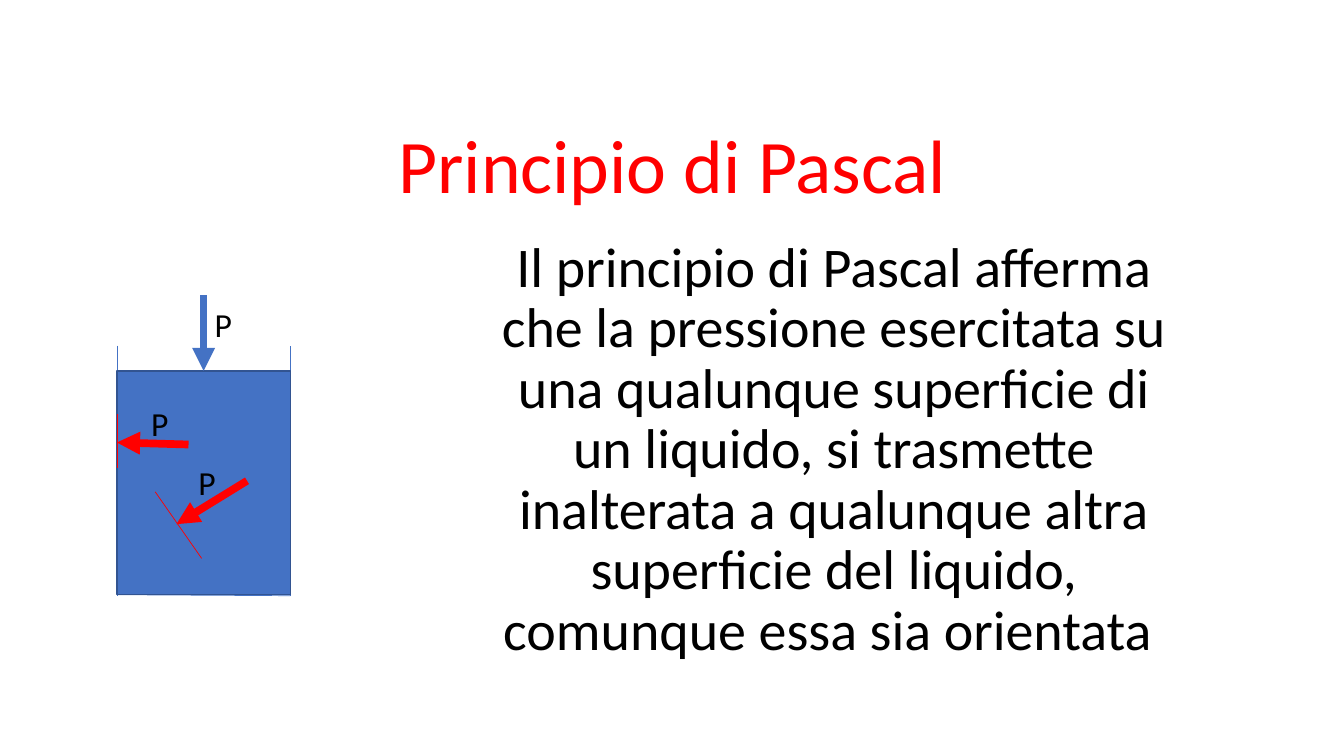
from typing import NamedTuple

from lxml import etree
from pptx import Presentation
from pptx import util as u
from pptx.dml.color import RGBColor
from pptx.enum import shapes, text
from pptx.oxml.ns import qn

EMU_PER_PX = 9144  # 100 px to the inch
FONT = "Calibri"
BLUE, DARK_BLUE, RED, BLACK = "4472C4", "325491", "FF0000", "000000"
THIN, THICK = 0.5, 5.5


class Box(NamedTuple):
    left: int
    top: int
    width: int
    height: int


class Line(NamedTuple):
    start: tuple[int, int]
    end: tuple[int, int]
    color: str
    width: float = THIN
    arrow: bool = False


LIQUID = Box(116, 368, 172, 222)
RIGHT, FLOOR, RIM = LIQUID.left + LIQUID.width, 591, 343
CENTER = LIQUID.left + LIQUID.width // 2

VESSEL_WALLS = [
    Line((LIQUID.left, RIM), (LIQUID.left, FLOOR), BLUE),
    Line((LIQUID.left, FLOOR - 1), (RIGHT, FLOOR), BLUE),
    Line((RIGHT, FLOOR), (RIGHT, RIM), BLUE),
]
APPLIED_PRESSURE = Line((CENTER, 293), (CENTER, LIQUID.top), BLUE, THICK, True)
TRANSMITTED_PRESSURES = [
    Line((154, 488), (200, 554), RED),
    Line((245, 477), (175, 520), RED, THICK, True),
    Line((LIQUID.left, 411), (LIQUID.left, 464), RED),
    Line((187, 441), (LIQUID.left, 439), RED, THICK, True),
]
PRESSURE_LABELS = [Box(203, 297, 52, 50), Box(187, 453, 52, 50), Box(140, 395, 52, 50)]

TITLE = "Principio di Pascal"
STATEMENT = (
    "Il principio di Pascal afferma che la pressione esercitata su una qualunque "
    "superficie di un liquido, si trasmette inalterata a qualunque altra superficie "
    "del liquido, comunque essa sia orientata "
)


def px(value: int) -> int:
    return u.Emu(value * EMU_PER_PX)


def rgb(color: str) -> RGBColor:
    return RGBColor.from_string(color)


def write(shape, content: str, *, size: int, color: str = BLACK,
          align=text.PP_ALIGN.LEFT, anchor=text.MSO_ANCHOR.TOP,
          spacing: float = 1.0, before: int = 0) -> None:
    frame = shape.text_frame
    frame.word_wrap = True
    frame.auto_size = text.MSO_AUTO_SIZE.NONE
    frame.vertical_anchor = anchor
    paragraph = frame.paragraphs[0]
    paragraph.alignment = align
    paragraph.line_spacing = spacing
    paragraph.space_before = u.Pt(before)
    run = paragraph.add_run()
    run.text = content
    run.font.name = FONT
    run.font.size = u.Pt(size)
    run.font.color.rgb = rgb(color)


def add_text_box(slide, box: Box):
    return slide.shapes.add_textbox(*map(px, box))


def add_line(slide, line: Line):
    connector = slide.shapes.add_connector(
        shapes.MSO_CONNECTOR.STRAIGHT, *map(px, line.start + line.end))
    connector.line.color.rgb = rgb(line.color)
    connector.line.width = u.Pt(line.width)
    if line.arrow:
        outline = connector.line._get_or_add_ln()
        etree.SubElement(outline, qn("a:tailEnd"), type="triangle")
    properties = connector._element.spPr
    etree.SubElement(properties, qn("a:effectLst"))
    return connector


def add_liquid(slide):
    liquid = slide.shapes.add_shape(shapes.MSO_SHAPE.RECTANGLE, *map(px, LIQUID))
    liquid.shadow.inherit = False
    liquid.fill.solid()
    liquid.fill.fore_color.rgb = rgb(BLUE)
    liquid.line.color.rgb = rgb(DARK_BLUE)
    liquid.line.width = u.Pt(1)
    return liquid


def main() -> None:
    presentation = Presentation()
    presentation.slide_width, presentation.slide_height = px(1333), px(750)
    slide = presentation.slides.add_slide(
        presentation.slide_layouts.get_by_name("Title Only"))

    title = slide.shapes.title
    title.left, title.top, title.width, title.height = map(px, Box(167, 123, 1000, 90))
    write(title, TITLE, size=54, color=RED, align=text.PP_ALIGN.CENTER,
          anchor=text.MSO_ANCHOR.BOTTOM, spacing=0.9)
    write(add_text_box(slide, Box(487, 232, 680, 465)), STATEMENT, size=40,
          align=text.PP_ALIGN.CENTER, spacing=0.9, before=10)

    for wall in VESSEL_WALLS:
        add_line(slide, wall)
    liquid = add_liquid(slide)
    add_line(slide, APPLIED_PRESSURE).end_connect(liquid, 0)
    for line in TRANSMITTED_PRESSURES:
        add_line(slide, line)
    for label in PRESSURE_LABELS:
        write(add_text_box(slide, label), "P", size=24)

    presentation.save("out.pptx")


if __name__ == "__main__":
    main()
